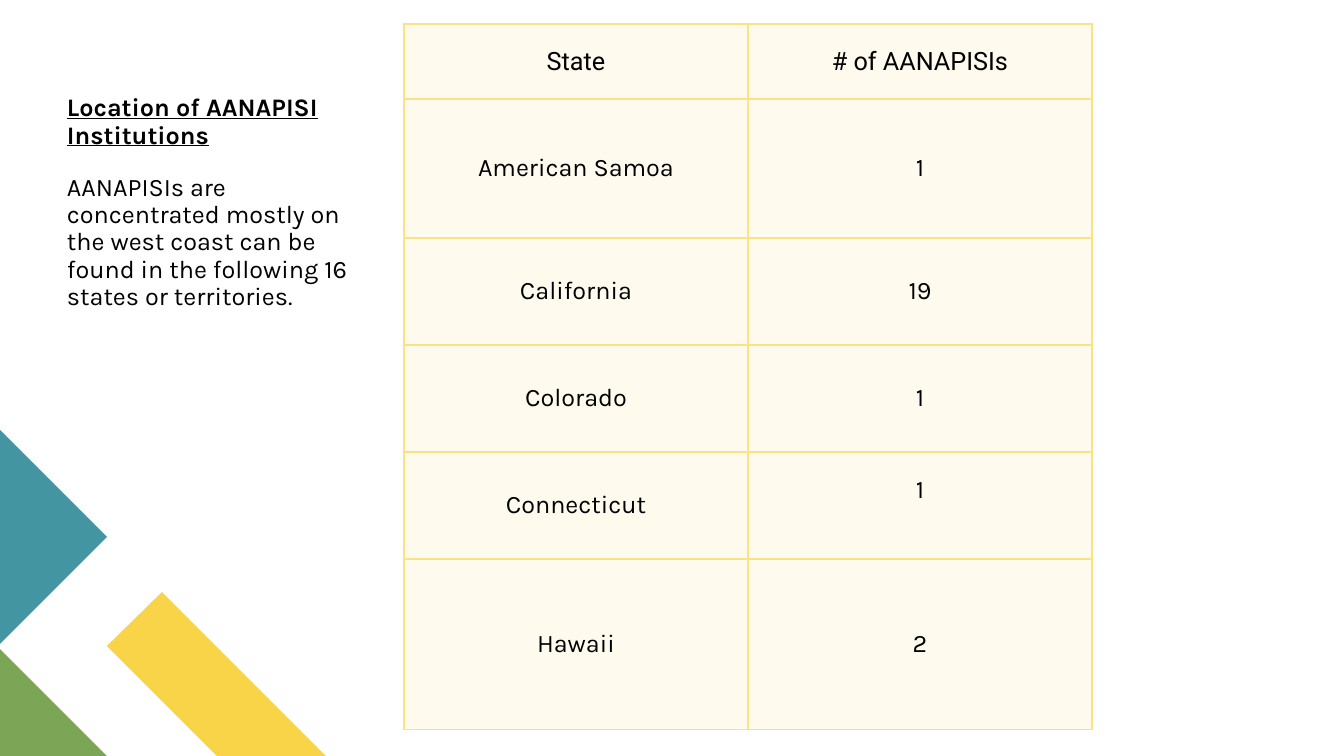
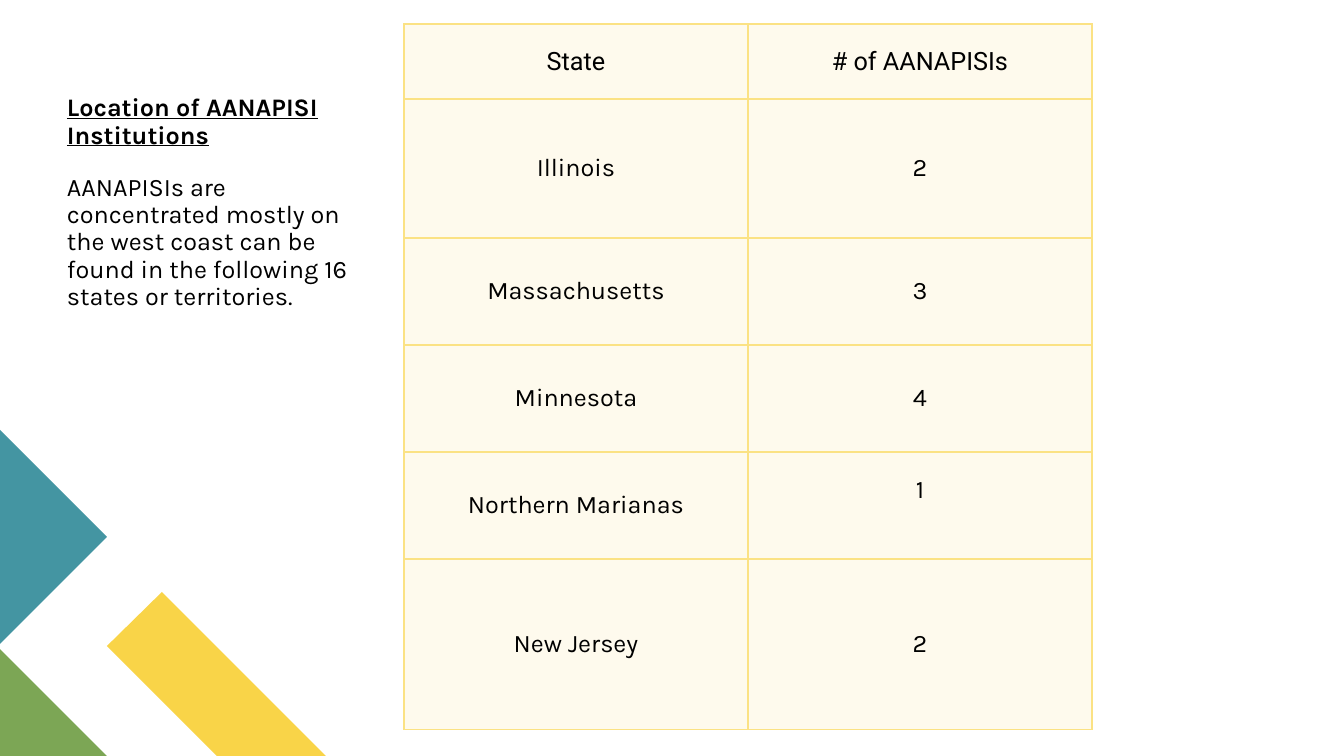
from lxml import etree
from pptx import Presentation
from pptx import util as u
from pptx.dml import color
from pptx.enum import text
from pptx.oxml import ns


class Theme:
    ink = "000000"
    teal = "4495A2"
    green = "7CA655"
    gold = "F9D448"
    cream = "FEFAED"
    rule = "FBE284"
    body = "Karla"
    head = "Roboto"
    size = 18


SCALE = 12192000 / 1344


def px(n):
    return u.Emu(round(n * SCALE))


def style(para, face=Theme.body, bold=False):
    for run in para.runs:
        run.font.name = face
        run.font.size = u.Pt(Theme.size)
        run.font.bold = bold
        run.font.underline = bold
        run.font.color.rgb = color.RGBColor.from_string(Theme.ink)


# Shared content
TITLE = "Location of AANAPISI Institutions"
INTRO = ("AANAPISIs are concentrated mostly on the west coast can be found "
         "in the following 16 states or territories.")
HEADS = ("State", "# of AANAPISIs")
DECOR = [
    (Theme.gold, [(326, 756), (217, 756), (107, 646), (162, 592)]),
    (Theme.green, [(107, 756), (0, 756), (0, 649)]),
    (Theme.teal, [(0, 430), (107, 537), (0, 644)]),
]
COLS = [344, 344]
ROWS = [75, 139, 107, 107, 107, 171]
RAISED = (4, 1)  # this cell's number sits above the middle

# Rows of each slide
PAGES = [
    [("American Samoa", 1), ("California", 19), ("Colorado", 1),
     ("Connecticut", 1), ("Hawaii", 2)],
    [("Illinois", 2), ("Massachusetts", 3), ("Minnesota", 4),
     ("Northern Marianas", 1), ("New Jersey", 2)],
]

deck = Presentation()
deck.slide_width, deck.slide_height = px(1344), px(756)

for states in PAGES:
    slide = deck.slides.add_slide(deck.slide_layouts[6])

    # Corner shapes
    for tint, points in DECOR:
        pen = slide.shapes.build_freeform(*points[0], scale=SCALE)
        pen.add_line_segments(points[1:], close=True)
        shape = pen.convert_to_shape()
        shape.shadow.inherit = False
        shape.fill.solid()
        shape.fill.fore_color.rgb = color.RGBColor.from_string(tint)
        shape.line.fill.background()

    # Title and intro
    frame = slide.shapes.add_textbox(px(67), px(65), px(311), px(440)).text_frame
    frame.word_wrap = True
    frame.margin_left, frame.margin_top = 0, px(30)
    frame.margin_right, frame.margin_bottom = px(10), px(5)
    frame.text = TITLE
    intro = frame.add_paragraph()
    intro.text = INTRO
    intro.space_before = u.Pt(18)
    for para in frame.paragraphs:
        para.line_spacing = 0.9
    style(frame.paragraphs[0], bold=True)
    style(intro)

    # Table of states
    table = slide.shapes.add_table(len(ROWS), len(COLS), px(404), px(24),
                                   px(sum(COLS)), px(sum(ROWS))).table
    table.first_row = table.horz_banding = False
    for col, width in zip(table.columns, COLS):
        col.width = px(width)
    for row, height in zip(table.rows, ROWS):
        row.height = px(height)

    for r, values in enumerate([HEADS, *states]):
        for c, value in enumerate(values):
            cell = table.cell(r, c)
            cell.text_frame.text = str(value)
            cell.vertical_anchor = text.MSO_ANCHOR.MIDDLE
            if (r, c) == RAISED:
                cell.margin_bottom = px(35)
            para = cell.text_frame.paragraphs[0]
            para.alignment = text.PP_ALIGN.CENTER
            style(para, Theme.body if r else Theme.head)
            cell.fill.solid()
            cell.fill.fore_color.rgb = color.RGBColor.from_string(Theme.cream)

            # Cell borders
            props = cell._tc.get_or_add_tcPr()
            for i, side in enumerate("LRTB"):
                edge = etree.Element(ns.qn("a:ln" + side), w=str(u.Pt(1)))
                fill = etree.SubElement(edge, ns.qn("a:solidFill"))
                etree.SubElement(fill, ns.qn("a:srgbClr"), val=Theme.rule)
                props.insert(i, edge)

deck.save("out.pptx")
